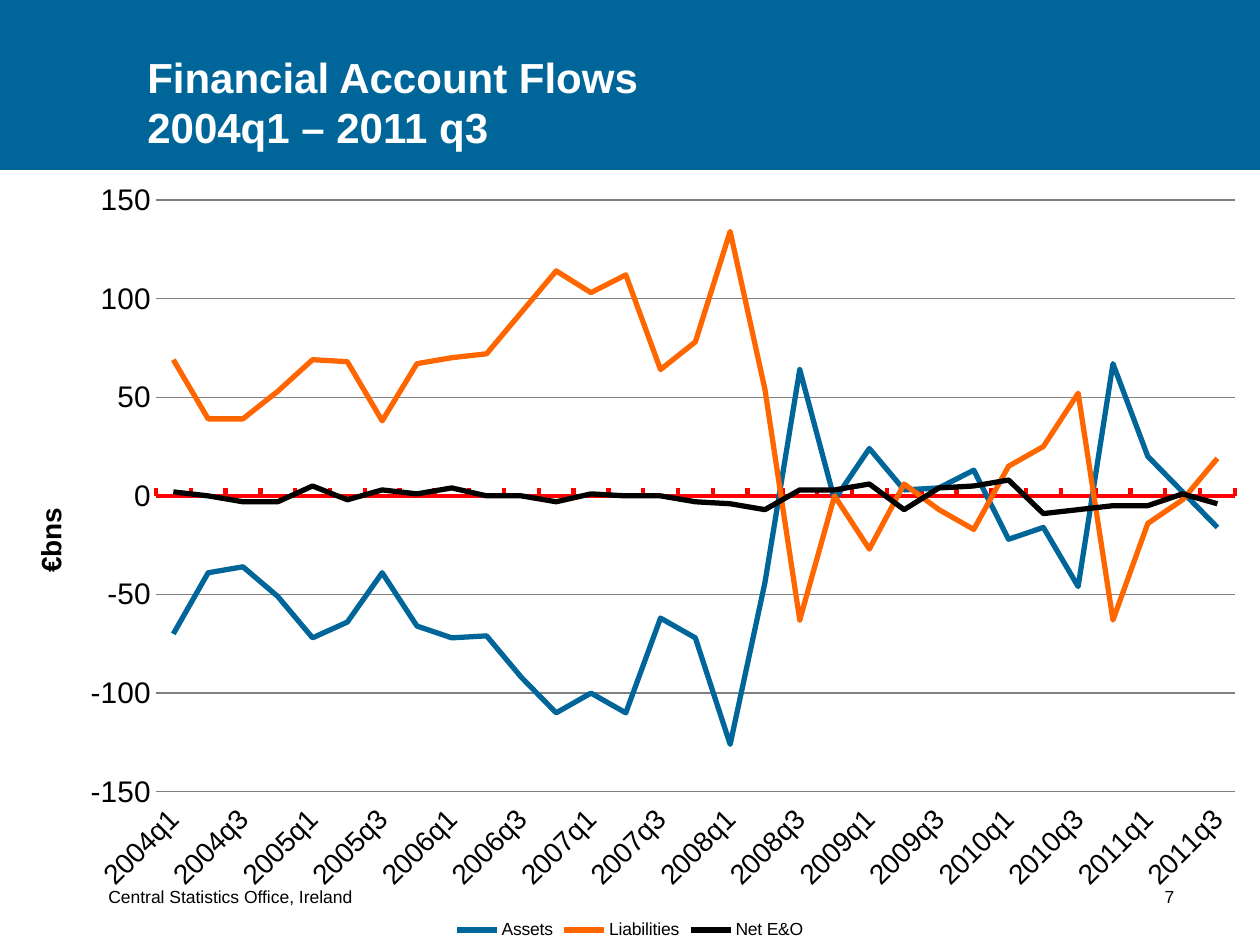
from lxml.etree import SubElement as Sub
from pptx import Presentation
from pptx.chart.data import CategoryChartData as Data
from pptx.dml.color import RGBColor
from pptx.enum.chart import (XL_CHART_TYPE as Kind, XL_LEGEND_POSITION as Pos,
                             XL_TICK_LABEL_POSITION as Label, XL_TICK_MARK as Tick)
from pptx.enum.shapes import MSO_SHAPE as Shape
from pptx.enum.text import MSO_ANCHOR as Anchor
from pptx.oxml.ns import qn
from pptx.util import Pt

# Content
TITLE = "Financial Account Flows\v2004q1 – 2011 q3"
FOOT = "Central Statistics Office, Ireland\t7"
UNIT = "€bns"
BLUE = RGBColor(0x00, 0x66, 0x99)
ORANGE = RGBColor(0xFF, 0x66, 0x00)
BLACK = RGBColor(0, 0, 0)
WHITE = RGBColor(0xFF, 0xFF, 0xFF)
RED = RGBColor(0xFF, 0, 0)
GREY = RGBColor(0x80, 0x80, 0x80)

# Flows in billions, one value a quarter
FLOWS = [
    ("Assets", BLUE, [
        -70, -39, -36, -51, -72, -64, -39, -66, -72, -71, -92, -110, -100, -110, -62, -72,
        -126, -44, 64, -2, 24, 3, 4, 13, -22, -16, -46, 67, 20, 2, -16]),
    ("Liabilities", ORANGE, [
        69, 39, 39, 53, 69, 68, 38, 67, 70, 72, 93, 114, 103, 112, 64, 78,
        134, 54, -63, 0, -27, 6, -7, -17, 15, 25, 52, -63, -14, -2, 19]),
    ("Net E&O", BLACK, [
        2, 0, -3, -3, 5, -2, 3, 1, 4, 0, 0, -3, 1, 0, 0, -3,
        -4, -7, 3, 3, 6, -7, 4, 5, 8, -9, -7, -5, -5, 1, -4]),
]
QUARTERS = [f"{2004 + i // 4}q{i % 4 + 1}" for i in range(31)]

# Places in px: left, top, width, height
PX = 914400 // 126
SLIDE = (1260, 945)
BAND = (0, 0, 1260, 170)
HEAD = (135, 0, 908, 158)
BASE = (96, 874, 1115, 39)
CHART = (0, 166, 1260, 779)
PLOT = (156, 200, 1079, 592)
SIDE = (28, 503)
TAB = 1066


def emu(box):
    return [n * PX for n in box]


def style(font, size, color=BLACK, bold=False):
    font.name, font.size, font.bold = "Arial", Pt(size), bold
    font.color.rgb = color


def write(slide, box, text):
    frame = slide.shapes.add_textbox(*emu(box)).text_frame
    frame.word_wrap = True
    frame.vertical_anchor = Anchor.BOTTOM
    frame.text = text
    return frame.paragraphs[0]


def place(node, box, index, inner=False):
    """Fix a chart part at a px place on the slide."""
    old = node.find(qn("c:layout"))
    if old is not None:
        node.remove(old)
    lay = node.makeelement(qn("c:layout"))
    node.insert(index, lay)
    man = Sub(lay, qn("c:manualLayout"))
    if inner:
        Sub(man, qn("c:layoutTarget"), val="inner")
    for key in "xy":
        Sub(man, qn(f"c:{key}Mode"), val="edge")
    left, top, wide, high = CHART
    parts = (box[0] - left) / wide, (box[1] - top) / high
    parts += tuple(n / full for n, full in zip(box[2:], (wide, high)))
    for key, part in zip("xywh", parts):
        Sub(man, qn(f"c:{key}"), val=f"{part:.4f}")


prs = Presentation()
prs.slide_width, prs.slide_height = emu(SLIDE)
slide = prs.slides.add_slide(prs.slide_layouts[6])

# Title band
band = slide.shapes.add_shape(Shape.RECTANGLE, *emu(BAND))
band.shadow.inherit = False
band.fill.solid()
band.fill.fore_color.rgb = BLUE
band.line.fill.background()
style(write(slide, HEAD, TITLE).font, 24, WHITE, True)

# Footer, with the page number at a right tab
foot = write(slide, BASE, FOOT)
tabs = Sub(foot._p.get_or_add_pPr(), qn("a:tabLst"))
Sub(tabs, qn("a:tab"), pos=str(TAB * PX), algn="r")
foot.line_spacing = 0.8
style(foot.font, 10)

# Chart
data = Data(number_format="General")
data.categories = QUARTERS
for name, _, vals in FLOWS:
    data.add_series(name, [v * 1000 for v in vals])
chart = slide.shapes.add_chart(Kind.LINE, *emu(CHART), data).chart
style(chart.font, 10)
chart.has_title = False
chart.has_legend = True
chart.legend.position = Pos.BOTTOM
chart.legend.include_in_layout = False
chart.plots[0].vary_by_categories = False
for line, (_, color, _) in zip(chart.plots[0].series, FLOWS):
    line.smooth = False
    line.format.line.width = Pt(3)
    line.format.line.color.rgb = color
area = chart.element.find(".//" + qn("c:plotArea"))
place(area, PLOT, 0, True)

# Quarter axis: every second label, slanted
cat = chart.category_axis
cat.tick_label_position = Label.LOW
cat.major_tick_mark, cat.minor_tick_mark = Tick.INSIDE, Tick.NONE
cat.format.line.color.rgb = RED
cat.format.line.width = Pt(2.5)
style(cat.tick_labels.font, 16)
node = area.find(qn("c:catAx"))
node.find(qn("c:txPr")).find(qn("a:bodyPr")).set("rot", "-2700000")
skip = node.makeelement(qn("c:tickLblSkip"), val="2")
node.find(qn("c:noMultiLvlLbl")).addprevious(skip)

# Value axis
val = chart.value_axis
val.minimum_scale, val.maximum_scale, val.major_unit = -150000, 150000, 50000
val.major_tick_mark = val.minor_tick_mark = Tick.NONE
val.format.line.fill.background()
val.major_gridlines.format.line.color.rgb = GREY
val.major_gridlines.format.line.width = Pt(0.75)
val.tick_labels.number_format = "#,##0,;\\-#,##0,"
val.tick_labels.number_format_is_linked = False
style(val.tick_labels.font, 17)
unit = val.axis_title.text_frame
unit.text = UNIT
style(unit.paragraphs[0].font, 16, bold=True)
node = area.find(qn("c:valAx")).find(qn("c:title"))
node.find(".//" + qn("a:bodyPr")).set("rot", "-5400000")
place(node, SIDE, 1)

prs.save("out.pptx")
